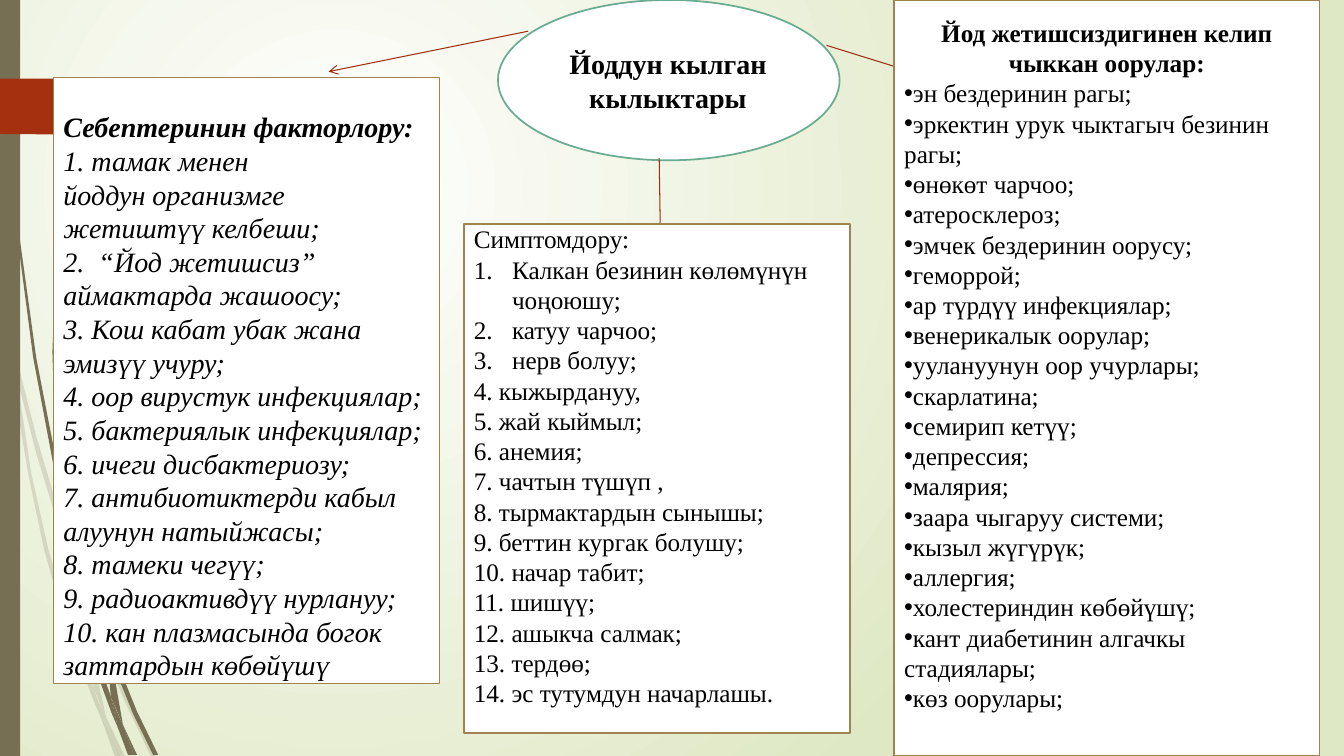
import pptx
import pptx.util
import pptx.dml.color
import pptx.enum.dml
import pptx.enum.shapes
import pptx.enum.text
import pptx.oxml
import pptx.oxml.ns
import lxml.etree

theme = {
    "font": "Times New Roman", "large": 20, "small": 18,
    "text": "000000", "paper": "FFFFFF", "edge": "9F8351", "ring": "6AAC91",
    "arrow": "9E2E0F", "tab": "A53010", "grass": "766F54", "back": "DFE8C4",
}
qn = pptx.oxml.ns.qn
Pt = pptx.util.Pt
Align = pptx.enum.text.PP_ALIGN
Anchor = pptx.enum.text.MSO_ANCHOR
Kind = pptx.enum.shapes.MSO_SHAPE

deck = pptx.Presentation()
deck.slide_width = pptx.util.Emu(12192000)
deck.slide_height = pptx.util.Inches(7.5)
col, row = deck.slide_width / 100, deck.slide_height / 100
slide = deck.slides.add_slide(deck.slide_layouts[4])
shapes = slide.shapes
tree = shapes._spTree


def paint(shape, fill, line=None):
    if fill:
        shape.fill.solid()
        shape.fill.fore_color.rgb = pptx.dml.color.RGBColor.from_string(theme[fill])
    if line:
        shape.line.color.rgb = pptx.dml.color.RGBColor.from_string(theme[line])
        shape.line.width = Pt(1.25)
    else:
        shape.line.fill.background()


def write(para, text, size, bold, slant, align):
    para.alignment = align
    para.line_spacing = 1.0
    para.space_before = para.space_after = Pt(0)
    run = para.add_run()
    run.text = text
    look = {"name": theme["font"], "size": Pt(theme[size]), "bold": bold, "italic": slant}
    for key, value in look.items():
        setattr(run.font, key, value)
    run.font.color.rgb = pptx.dml.color.RGBColor.from_string(theme["text"])


back = slide.background.fill
back.gradient()
for stop, name in zip(back.gradient_stops, ("paper", "back")):
    stop.color.rgb = pptx.dml.color.RGBColor.from_string(theme[name])
grad = next(slide._element.iter(qn("a:gradFill")))
grad.remove(grad.find(qn("a:lin")))
glow = lxml.etree.SubElement(grad, qn("a:path"), {"path": "circle"})
lxml.etree.SubElement(glow, qn("a:fillToRect"), {"l": "50000", "t": "50000", "r": "100000", "b": "100000"})

pale = [
    [(11, 350), (9, 322), (0, 282), (0, 299), (10, 344)],
    [(58, 522), (84, 599), (85, 586), (62, 520), (36, 433), (14, 345), (17, 376), (36, 450)],
    [(92, 607), (88, 596), (88, 610), (123, 694), (150, 751), (155, 751), (127, 692)],
    [(119, 751), (124, 751), (105, 711)],
    [(93, 683), (70, 619), (48, 545), (31, 469), (17, 376), (11, 350),
     (18, 410), (28, 470), (44, 546), (65, 621), (92, 693), (101, 714)],
    [(84, 599), (87, 646), (93, 683), (105, 711), (91, 646), (88, 608)],
    [(101, 714), (114, 751), (119, 751)],
    [(96, 692), (93, 683), (101, 714), (119, 751), (105, 711)],
]
dark = [
    [(7, 110), (17, 233), (33, 355), (56, 477), (57, 481), (55, 453),
     (36, 355), (19, 232), (8, 109), (5, 48), (4, 0), (3, 0), (4, 48)],
    [(113, 649), (110, 641), (111, 656), (132, 708), (152, 749), (157, 749), (136, 706)],
    [(110, 691), (98, 657), (83, 607), (72, 556), (64, 505), (57, 477),
     (68, 557), (79, 609), (93, 659), (111, 708), (117, 722)],
    [(60, 472), (58, 453), (54, 349), (58, 245), (63, 193), (70, 141),
     (62, 193), (56, 245), (52, 349), (55, 449)],
    [(133, 749), (136, 749), (122, 719)],
    [(117, 722), (127, 749), (131, 749)],
    [(106, 645), (110, 691), (122, 719), (111, 656)],
    [(116, 706), (110, 691), (117, 722), (130, 749), (133, 749), (122, 719)],
]
tab = [[(173, 108), (148, 133), (146, 134), (136, 134), (0, 133), (0, 78),
        (146, 78), (148, 79), (173, 104)]]

bar = shapes.add_shape(Kind.RECTANGLE, 0, 0, round(1.5 * col), deck.slide_height)
bar.shadow.inherit = False
paint(bar, "grass")
for group, fill, alpha in ((pale, "grass", 20), (dark, "grass", 100), (tab, "tab", 100)):
    for points in group:
        path = shapes.build_freeform(*points[0], scale=deck.slide_height / 750)
        path.add_line_segments(points[1:], close=True)
        blade = path.convert_to_shape()
        blade.shadow.inherit = False
        paint(blade, fill)
        if alpha < 100:
            tint = next(blade._element.spPr.iter(qn("a:srgbClr")))
            lxml.etree.SubElement(tint, qn("a:alpha"), {"val": str(alpha * 1000)})

spot = [round(v) for v in (37.05 * col, 0, 25.42 * col, 21.2 * row)]
oval = shapes.add_shape(Kind.OVAL, *spot)
oval.shadow.inherit = False
paint(oval, "paper", "ring")

for x1, y1, x2, y2 in ((39.3, 4.13, 24.45, 9.47), (49.05, 20.93, 49.2, 38.27), (61.5, 6, 69.23, 10.27)):
    ends = [round(v) for v in (x1 * col, y1 * row, x2 * col, y2 * row)]
    arrow = shapes.add_connector(pptx.enum.shapes.MSO_CONNECTOR.STRAIGHT, *ends)
    arrow.line.color.rgb = pptx.dml.color.RGBColor.from_string(theme["arrow"])
    arrow.line.width = Pt(0.75)
    lxml.etree.SubElement(arrow.line._get_or_add_ln(), qn("a:tailEnd"), {"type": "arrow"})
    lxml.etree.SubElement(arrow._element.spPr, qn("a:effectLst"))

causes = """Себептеринин факторлору:
1. тамак менен
йоддун организмге жетиштүү келбеши;
2.  “Йод жетишсиз” аймактарда жашоосу;
3. Кош кабат убак жана эмизүү учуру;
4. оор вирустук инфекциялар;
5. бактериялык инфекциялар;
6. ичеги дисбактериозу;
7. антибиотиктерди кабыл алуунун натыйжасы;
8. тамеки чегүү;
9. радиоактивдүү нурлануу;
10. кан плазмасында богок заттардын көбөйүшү"""
signs = """Симптомдору:
Калкан безинин көлөмүнүн чоңоюшу;
катуу чарчоо;
нерв болуу;
4. кыжырдануу,
5. жай кыймыл;
6. анемия;
7. чачтын түшүп ,
8. тырмактардын сынышы;
9. беттин кургак болушу;
10. начар табит;
11. шишүү;
12. ашыкча салмак;
13. тердөө;
14. эс тутумдун начарлашы."""
ills = """Йод жетишсиздигинен келип чыккан оорулар:
эн бездеринин рагы;
эркектин урук чыктагыч безинин рагы;
өнөкөт чарчоо;
атеросклероз;
эмчек бездеринин оорусу;
геморрой;
ар түрдүү инфекциялар;
венерикалык оорулар;
уулануунун оор учурлары;
скарлатина;
семирип кетүү;
депрессия;
малярия;
заара чыгаруу системи;
кызыл жүгүрүк;
аллергия;
холестериндин көбөйүшү;
кант диабетинин алгачкы стадиялары;
көз оорулары;"""

number = ("buAutoNum", {"type": "arabicPeriod"}, theme["font"], 0.38)
bullet = ("buChar", {"char": "•"}, "Arial", 0)
plain = ("buNone", {}, theme["font"], 0)
boxes = [
    (0, (40.6, 0, 18.2, 21.2), 0, "Йоддун кылган кылыктары", "large", True, False, Align.CENTER, plain, 0),
    (1, (3.97, 10.27, 28.73, 80.13), 0.32, causes, "large", True, True, Align.LEFT, plain, 0),
    (2, (34.5, 29.6, 28.73, 67.33), 0, signs, "small", False, False, Align.LEFT, number, 3),
    (3, (66.53, 0, 31.65, 100), 0.17, ills, "small", True, False, Align.CENTER, bullet, 19),
]
holders = {item.placeholder_format.idx: item for item in slide.placeholders}
for key, (x, y, w, h), inset, text, size, bold, slant, align, mark, count in boxes:
    box = holders.pop(key)
    place = {"left": x * col, "top": y * row, "width": w * col, "height": h * row}
    for name, value in place.items():
        setattr(box, name, round(value))
    if key:
        paint(box, "paper", "edge")
    frame = box.text_frame
    style = {
        "word_wrap": True, "auto_size": pptx.enum.text.MSO_AUTO_SIZE.NONE,
        "vertical_anchor": Anchor.TOP if key else Anchor.MIDDLE,
        "margin_left": pptx.util.Inches(0.1), "margin_right": pptx.util.Inches(0.1),
        "margin_top": pptx.util.Inches(inset), "margin_bottom": 0,
    }
    for name, value in style.items():
        setattr(frame, name, value)
    for i, line in enumerate(text.split("\n")):
        para = frame.add_paragraph() if i else frame.paragraphs[0]
        write(para, line, size, bold and i == 0, slant, Align.LEFT if i else align)
        kind, attrs, font, indent = mark if 0 < i <= count else plain
        props = para._p.get_or_add_pPr()
        props.set("marL", str(pptx.util.Inches(indent)))
        props.set("indent", str(-pptx.util.Inches(indent)))
        lxml.etree.SubElement(props, qn("a:buFont"), {"typeface": font})
        lxml.etree.SubElement(props, qn("a:" + kind), attrs)
    tree.append(box._element)
for spare in holders.values():
    tree.remove(spare._element)

deck.save("out.pptx")
